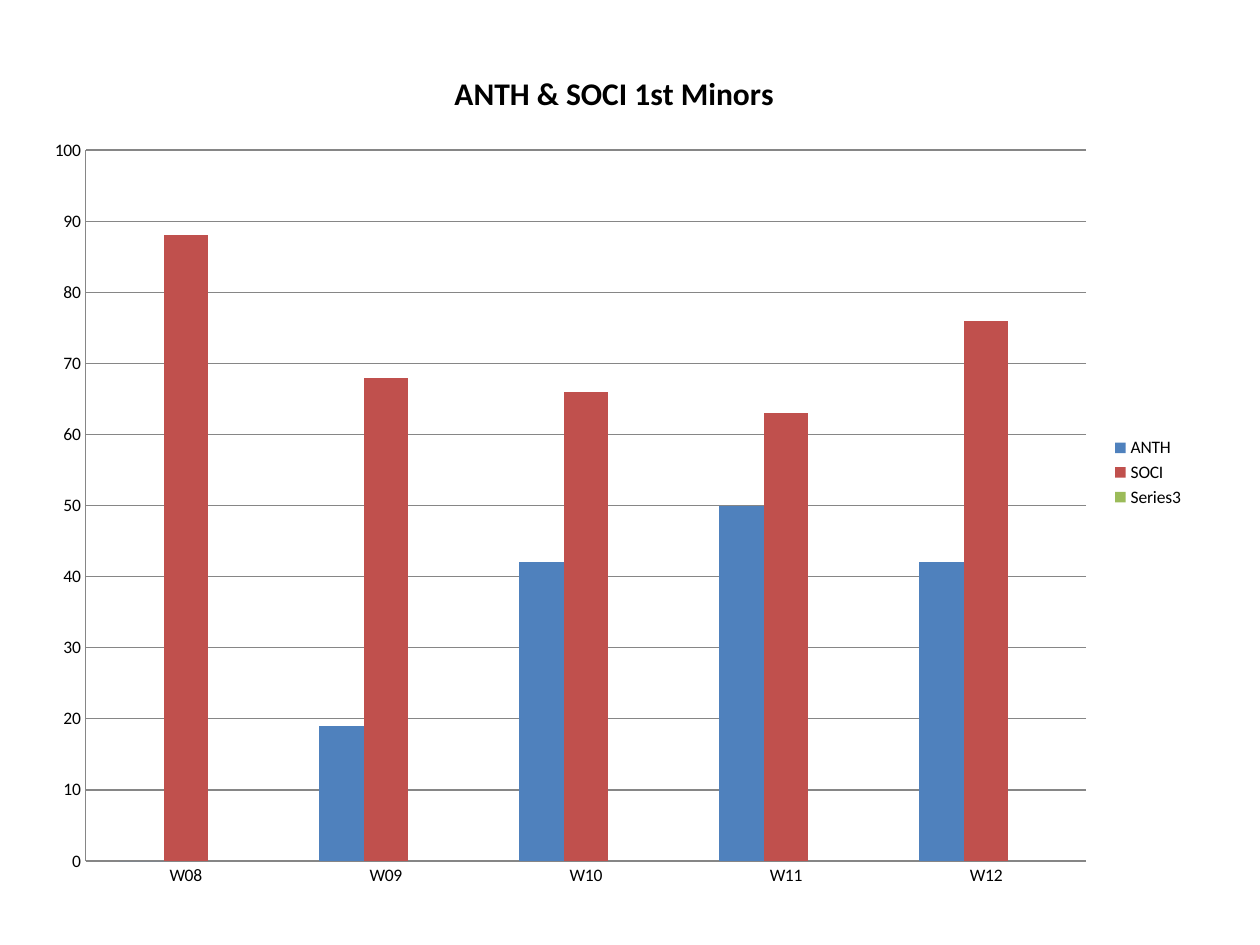
"""Build a slide with a clustered column chart of ANTH and SOCI first minors."""
import pptx
import pptx.chart.data
import pptx.dml.color
import pptx.enum.chart
import pptx.util

Pt = pptx.util.Pt
RGB = pptx.dml.color.RGBColor.from_string
XL = pptx.enum.chart

THEME = {
    "font": "Calibri",
    "text": RGB("000000"),
    "line": RGB("868686"),
    "body": Pt(10),
    "title": Pt(18),
}
SERIES = [
    ("ANTH", [0, 19, 42, 50, 42], "4F81BD"),
    ("SOCI", [88, 68, 66, 63, 76], "C0504D"),
    ("Series3", [None] * 5, "9BBB59"),
]

prs = pptx.Presentation()
prs.slide_width, prs.slide_height = Pt(720), Pt(540)
s = prs.slides.add_slide(prs.slide_layouts[6])

data = pptx.chart.data.CategoryChartData()
data.categories = ["W08", "W09", "W10", "W11", "W12"]
for name, values, color in SERIES:
    data.add_series(name, values)

chart = s.shapes.add_chart(
    XL.XL_CHART_TYPE.COLUMN_CLUSTERED, Pt(18), Pt(24), Pt(666), Pt(492), data
).chart
font = {"name": THEME["font"], "size": THEME["body"], "bold": False}
for key, value in font.items():
    setattr(chart.font, key, value)
chart.font.color.rgb = THEME["text"]

chart.has_title = True
p = chart.chart_title.text_frame.paragraphs[0]
r = p.add_run()
r.text = "ANTH & SOCI 1st Minors"
for key, value in {**font, "size": THEME["title"], "bold": True}.items():
    setattr(r.font, key, value)
r.font.color.rgb = THEME["text"]

chart.has_legend = True
legend = {"position": XL.XL_LEGEND_POSITION.RIGHT, "include_in_layout": False}
for key, value in legend.items():
    setattr(chart.legend, key, value)

plot = chart.plots[0]
for key, value in {"gap_width": 150, "overlap": 0, "vary_by_categories": False}.items():
    setattr(plot, key, value)
for series, (name, values, color) in zip(plot.series, SERIES):
    series.format.fill.solid()
    series.format.fill.fore_color.rgb = RGB(color)
    series.invert_if_negative = False

scale = {"minimum_scale": 0, "maximum_scale": 100, "major_unit": 10, "has_major_gridlines": True}
for key, value in scale.items():
    setattr(chart.value_axis, key, value)
for axis in (chart.category_axis, chart.value_axis):
    axis.major_tick_mark = axis.minor_tick_mark = XL.XL_TICK_MARK.NONE
for part in (chart.category_axis, chart.value_axis, chart.value_axis.major_gridlines):
    part.format.line.color.rgb = THEME["line"]
    part.format.line.width = Pt(0.75)

prs.save("out.pptx")
